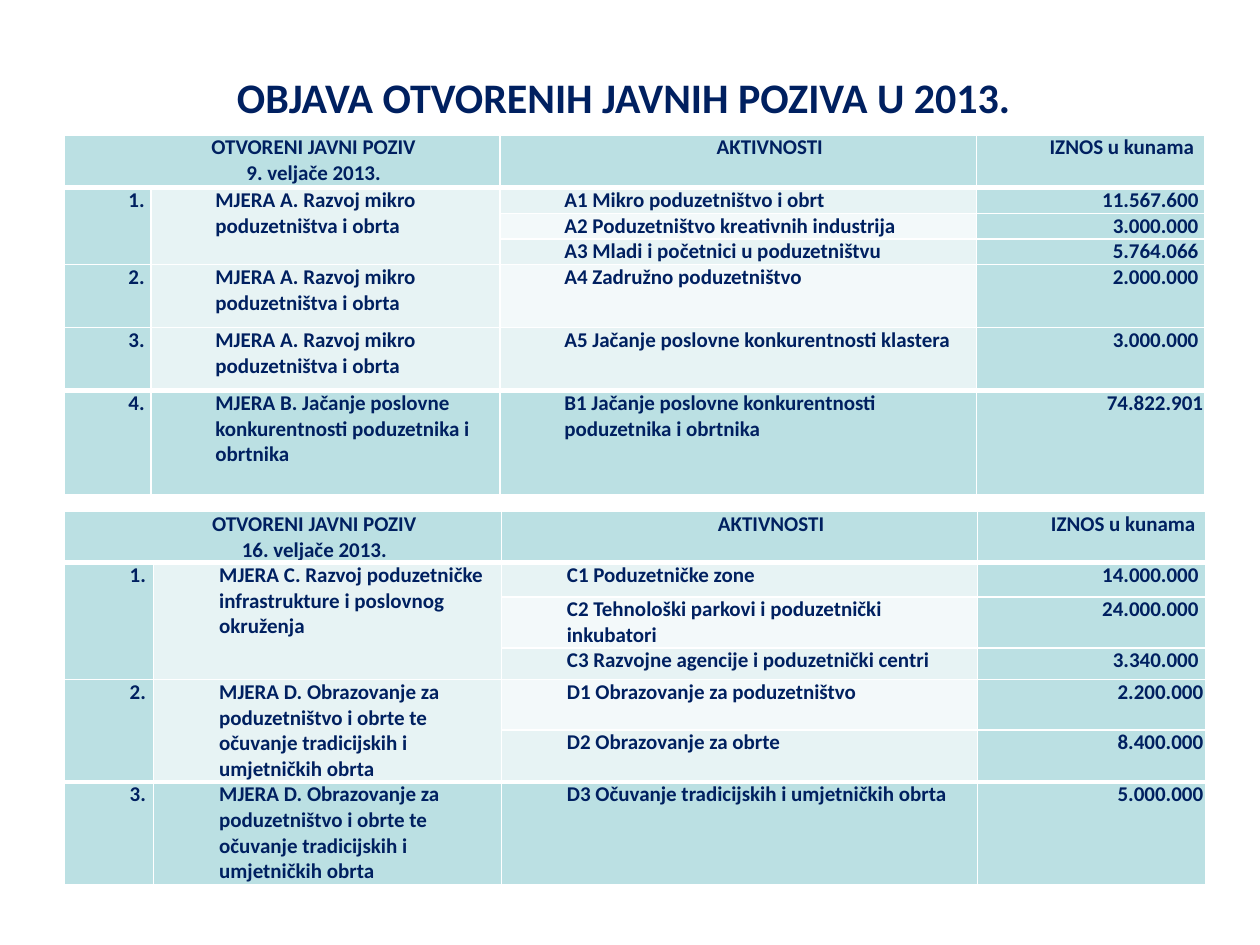
from lxml import etree
from pptx import Presentation
from pptx.dml.color import RGBColor
from pptx.enum.text import MSO_ANCHOR, PP_ALIGN
from pptx.oxml.ns import qn
from pptx.util import Inches, Pt

LEFT, CENTER, RIGHT = PP_ALIGN.LEFT, PP_ALIGN.CENTER, PP_ALIGN.RIGHT
MIDDLE, TOP = MSO_ANCHOR.MIDDLE, MSO_ANCHOR.TOP
NAVY, TEAL, PALE, LIGHT, WHITE = "002060", "BBE0E3", "E7F3F4", "F3F9FA", "FFFFFF"
THIN, THICK = 1, 3
MICRO = "MJERA A. Razvoj mikro poduzetništva i obrta"
CRAFT = ("MJERA D. Obrazovanje za poduzetništvo i obrte te "
         "očuvanje tradicijskih i umjetničkih obrta")

FIRST = {
    "box": (0.51, 1.07, 9.06, 2.83),
    "cols": [0.69, 2.77, 3.78, 1.81],
    "rows": [0.42, 0.2, 0.2, 0.2, 0.5, 0.5, 0.83],
    "inset": 0.01,
    "spans": [(1, 3)],
    "date": "9. veljače 2013.",
    "data": [
        ("1.", MICRO, "A1 Mikro poduzetništvo i obrt", "11.567.600 "),
        ("", "", "A2 Poduzetništvo kreativnih industrija", "3.000.000 "),
        ("", "", "A3 Mladi i početnici u poduzetništvu", "5.764.066 "),
        ("2.", MICRO, "A4 Zadružno poduzetništvo", "2.000.000 "),
        ("3.", MICRO, "A5 Jačanje poslovne konkurentnosti klastera", "3.000.000 "),
        ("4.", "MJERA B. Jačanje poslovne konkurentnosti poduzetnika i obrtnika",
         "B1 Jačanje poslovne konkurentnosti poduzetnika i obrtnika", "74.822.901"),
    ],
}
SECOND = {
    "box": (0.51, 4.06, 9.06, 2.92),
    "cols": [0.71, 2.76, 3.78, 1.81],
    "rows": [0.4, 0.27, 0.4, 0.25, 0.4, 0.4, 0.8],
    "inset": 0.02,
    "spans": [(1, 3), (4, 5)],
    "date": "16. veljače 2013.",
    "data": [
        ("1.", "MJERA C. Razvoj poduzetničke infrastrukture i poslovnog okruženja",
         "C1 Poduzetničke zone", "14.000.000 "),
        ("", "", "C2 Tehnološki parkovi i poduzetnički inkubatori", "24.000.000 "),
        ("", "", "C3 Razvojne agencije i poduzetnički centri", "3.340.000 "),
        ("2.", CRAFT, "D1 Obrazovanje za poduzetništvo", "2.200.000"),
        ("", "", "D2 Obrazovanje za obrte", "8.400.000"),
        ("3.", CRAFT, "D3 Očuvanje tradicijskih i umjetničkih obrta", "5.000.000"),
    ],
}


def color(code):
    return RGBColor.from_string(code)


def assign(item, values):
    for name, value in values.items():
        setattr(item, name, value)


def write(frame, text, size, align, indent=0):
    frame.text = text
    for para in frame.paragraphs:
        para.alignment = align
        props = para._p.get_or_add_pPr()
        props.set("marL", str(Inches(indent)))
        props.set("indent", "0")
        for run in para.runs:
            assign(run.font, {"name": "Calibri", "size": Pt(size), "bold": True})
            run.font.color.rgb = color(NAVY)


def border(cell, widths):
    props = cell._tc.get_or_add_tcPr()
    for side, width in widths.items():
        line = etree.SubElement(props, qn("a:ln" + side), w=str(Pt(width)))
        fill = etree.SubElement(line, qn("a:solidFill"))
        etree.SubElement(fill, qn("a:srgbClr"), val=WHITE)


def shade(row, col, last):
    if row in (0, last) or col in (0, 3):
        return TEAL
    return LIGHT if col == 2 and row % 2 == 0 else PALE


def add_title(slide, box):
    title = slide.shapes.title
    assign(title, dict(zip(("left", "top", "width", "height"), map(Inches, box))))
    assign(title.text_frame, {
        "vertical_anchor": MIDDLE, "word_wrap": True, "margin_left": 0,
        "margin_right": Inches(0.1), "margin_top": Inches(0.05),
        "margin_bottom": Inches(0.05)})
    write(title.text_frame, "OBJAVA OTVORENIH JAVNIH POZIVA U 2013.", 24, CENTER)


def add_calls(slide, box, plan):
    count, last = len(plan["rows"]), len(plan["rows"]) - 1
    table = slide.shapes.add_table(count, 4, *map(Inches, box)).table
    for col, width in zip(table.columns, plan["cols"]):
        col.width = Inches(width)
    for row, height in zip(table.rows, plan["rows"]):
        row.height = Inches(height)

    head = ("OTVORENI JAVNI POZIV\n" + plan["date"], "", "AKTIVNOSTI", "IZNOS u kunama")
    inset = Inches(plan["inset"])
    for r, texts in enumerate([head] + plan["data"]):
        for c, text in enumerate(texts):
            cell = table.cell(r, c)
            assign(cell, {"margin_left": inset, "margin_right": inset,
                          "margin_top": 0, "margin_bottom": 0,
                          "vertical_anchor": TOP})
            border(cell, {"L": THIN, "R": THIN,
                          "T": THICK if r in (1, last) else THIN,
                          "B": THICK if r in (0, last - 1) else THIN})
            cell.fill.solid()
            cell.fill.fore_color.rgb = color(shade(r, c, last))
            align = CENTER if r == 0 else RIGHT if c == 3 else LEFT
            write(cell.text_frame, text, 12, align, 0.5)

    table.cell(0, 0).merge(table.cell(0, 1))
    for start, end in plan["spans"]:
        for c in (0, 1):
            table.cell(start, c).merge(table.cell(end, c))


def main():
    deck = Presentation()
    assign(deck, {"slide_width": Inches(10), "slide_height": Inches(7.5)})
    slide = deck.slides.add_slide(deck.slide_layouts[5])
    add_title(slide, (0.75, 0.51, 8.5, 0.51))
    for plan in (FIRST, SECOND):
        add_calls(slide, plan["box"], plan)
    deck.save("out.pptx")


if __name__ == "__main__":
    main()
